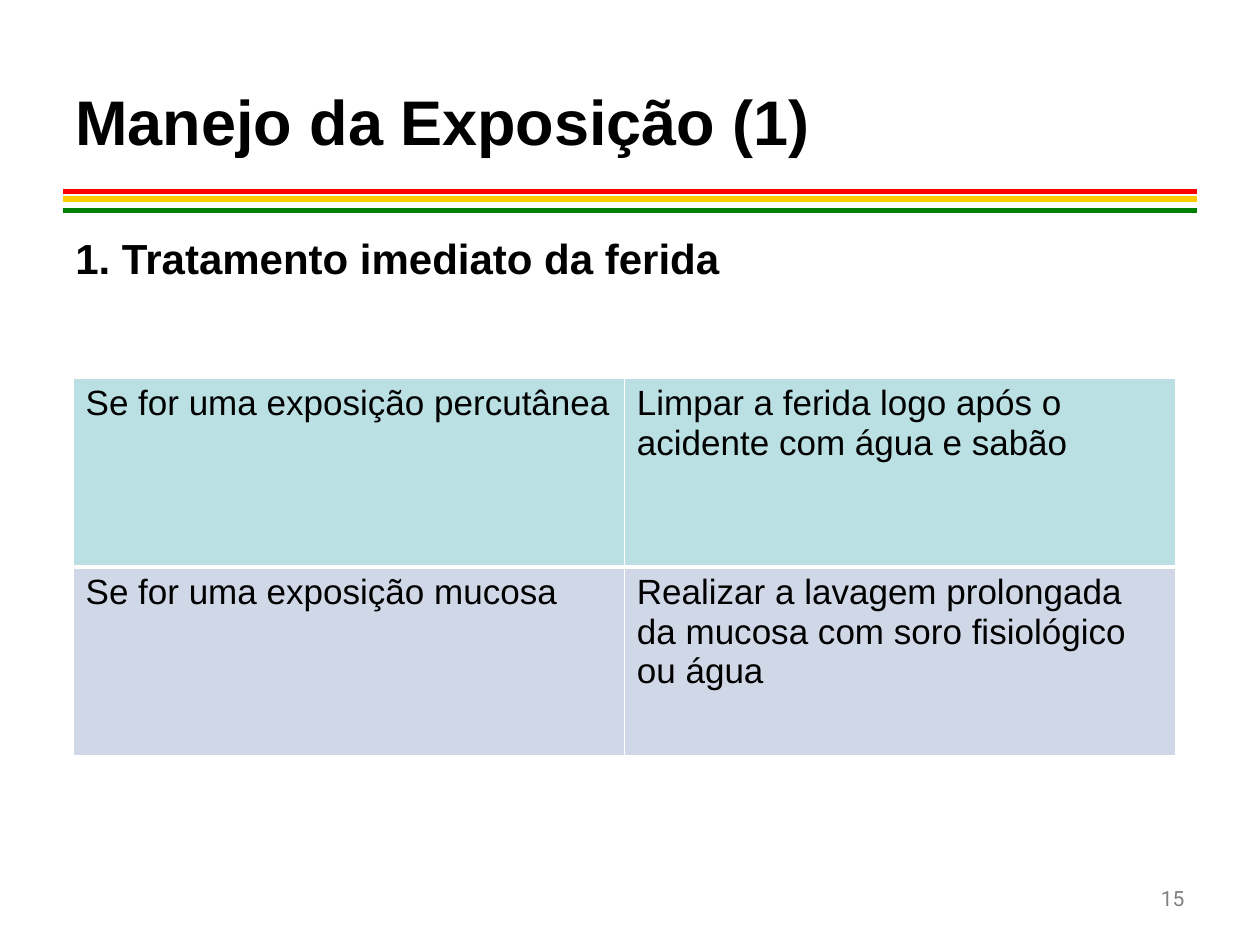
from lxml import etree
from pptx import Presentation
from pptx.dml.color import RGBColor
from pptx.enum.shapes import MSO_CONNECTOR
from pptx.enum.text import MSO_ANCHOR, PP_ALIGN
from pptx.oxml.ns import qn
from pptx.util import Inches, Pt

STRAIGHT = MSO_CONNECTOR.STRAIGHT
TOP, MIDDLE = MSO_ANCHOR.TOP, MSO_ANCHOR.MIDDLE
LEFT, RIGHT = PP_ALIGN.LEFT, PP_ALIGN.RIGHT

STRIPES = [(1.58, "FFCC00"), (1.52, "FF0000"), (1.67, "008000")]
ROWS = [
    ("BBE0E3", ["Se for uma exposição percutânea",
                "Limpar a ferida logo após o acidente com água e sabão"]),
    ("D0D8E8", ["Se for uma exposição mucosa",
                "Realizar a lavagem prolongada da mucosa com soro fisiológico ou água"]),
]


def color(value):
    return RGBColor.from_string(value)


def write(tf, text, size, bold=False, font="Arial", fill="000000", align=LEFT):
    p = tf.paragraphs[0]
    p.alignment = align
    r = p.add_run()
    r.text = text
    formats = {"size": Pt(size), "bold": bold, "name": font}
    for name, value in formats.items():
        setattr(r.font, name, value)
    r.font.color.rgb = color(fill)
    return p


def add_text(s, box, text, size, anchor=TOP, **formats):
    tf = s.shapes.add_textbox(*map(Inches, box)).text_frame
    tf.word_wrap = True
    tf.vertical_anchor = anchor
    return tf, write(tf, text, size, **formats)


def add_stripes(s, left, right):
    for y, value in STRIPES:
        line = s.shapes.add_connector(
            STRAIGHT, Inches(left), Inches(y), Inches(right), Inches(y))
        line.line.color.rgb = color(value)
        line.line.width = Pt(3)
        etree.SubElement(line._element.spPr, qn("a:effectLst"))


def add_heading(s, box):
    tf, p = add_text(s, box, "1. Tratamento imediato da ferida", 24, bold=True)
    tf.margin_top = Inches(0.09)
    p.line_spacing = 0.8


def set_borders(cell, widths):
    """Draw white borders; widths maps each side tag to points."""
    tc_pr = cell._tc.get_or_add_tcPr()
    for i, (side, width) in enumerate(widths.items()):
        ln = etree.Element(qn(f"a:{side}"), w=str(Pt(width)))
        fill = etree.SubElement(ln, qn("a:solidFill"))
        etree.SubElement(fill, qn("a:srgbClr"), val="FFFFFF")
        tc_pr.insert(i, ln)


def add_exposure_table(s, box):
    table = s.shapes.add_table(len(ROWS), 2, *map(Inches, box)).table
    last = len(ROWS) - 1
    for i, (fill, texts) in enumerate(ROWS):
        for j, text in enumerate(texts):
            cell = table.cell(i, j)
            cell.fill.solid()
            cell.fill.fore_color.rgb = color(fill)
            write(cell.text_frame, text, 20)
            set_borders(cell, {"lnL": 1, "lnR": 1,
                               "lnT": 3 if i > 0 else 1,
                               "lnB": 3 if i < last else 1})


def main():
    prs = Presentation()
    prs.slide_width, prs.slide_height = Inches(10), Inches(7.5)
    s = prs.slides.add_slide(prs.slide_layouts[6])
    add_stripes(s, 0.5, 9.5)
    add_text(s, (8.33, 6.98, 1.17, 0.52), "15", 12,
             font="Roboto", fill="808080", align=RIGHT)
    add_text(s, (0.5, 0.33, 8.58, 1.25), "Manejo da Exposição (1)", 36,
             anchor=MIDDLE, bold=True)
    add_heading(s, (0.5, 1.83, 9, 4.92))
    add_exposure_table(s, (0.58, 3, 8.75, 3))
    prs.save("out.pptx")


if __name__ == "__main__":
    main()
